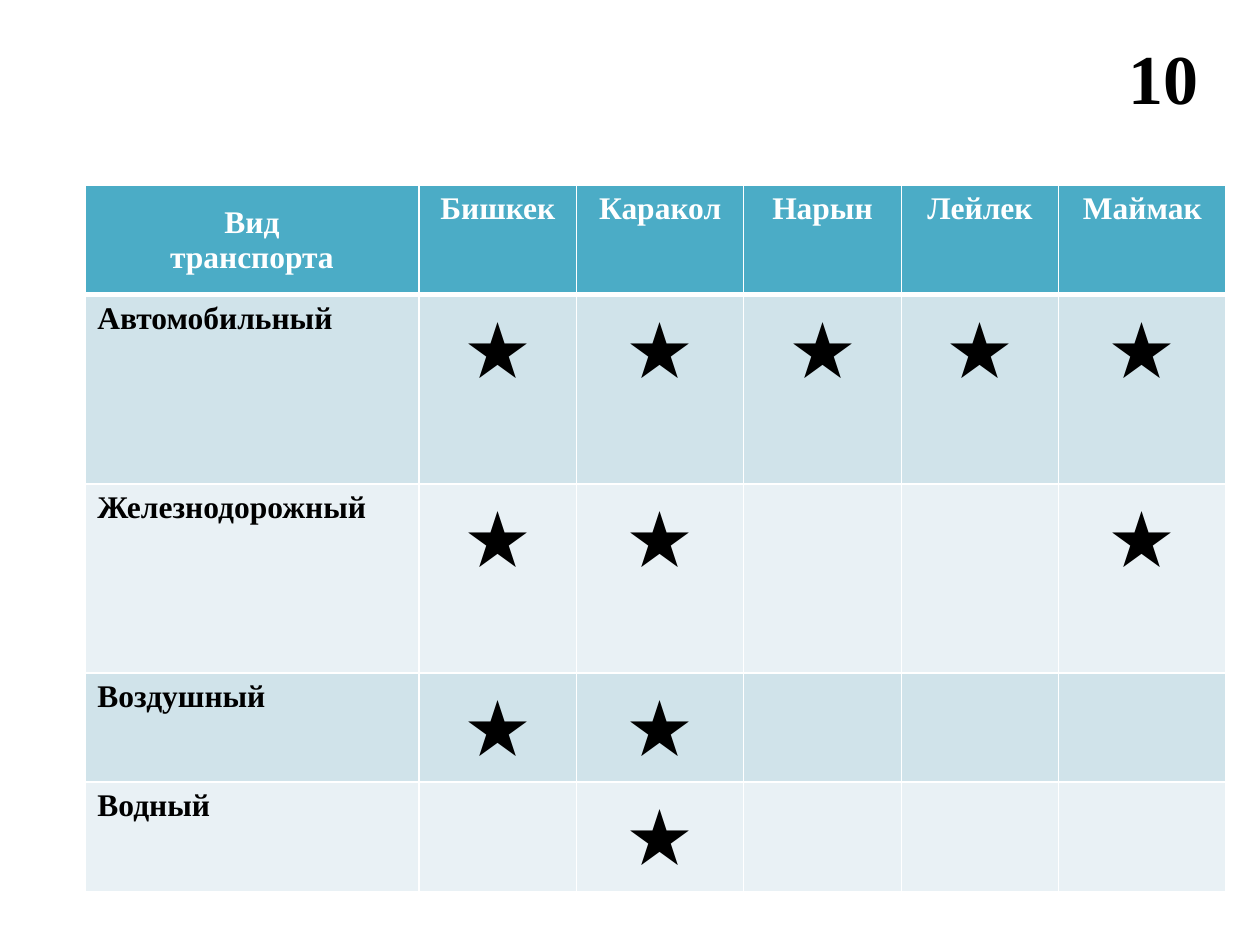
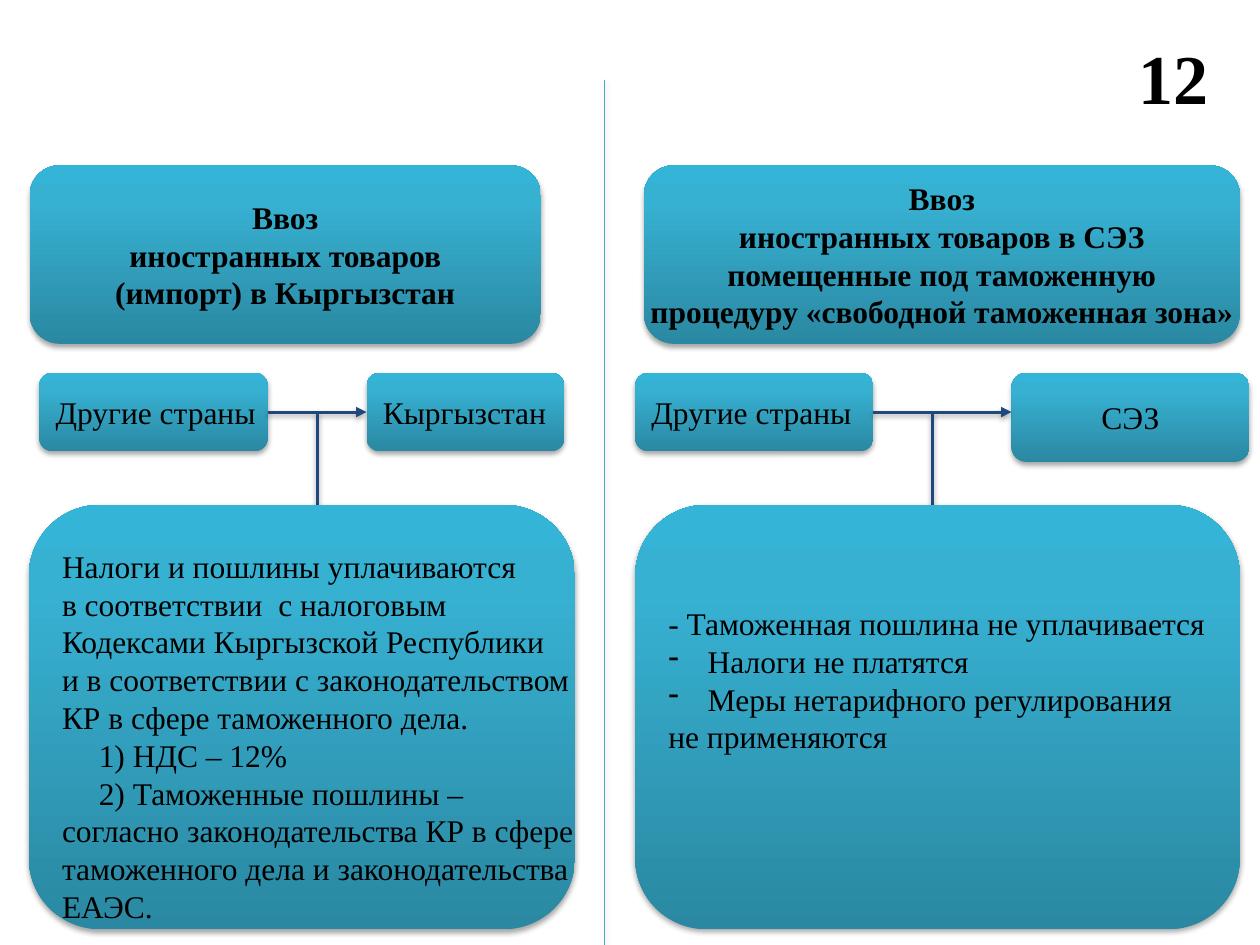
import copy
from dataclasses import dataclass

import pptx
import pptx.dml.color
import pptx.enum.shapes
import pptx.enum.text
import pptx.oxml
import pptx.oxml.ns
import pptx.util

Pt = pptx.util.Pt
RGB = pptx.dml.color.RGBColor.from_string
ALIGN = pptx.enum.text.PP_ALIGN
ANCHOR = pptx.enum.text.MSO_ANCHOR
NS = pptx.oxml.ns.nsdecls("a")


@dataclass(frozen=True)
class Theme:
    font: str = "Times New Roman"
    star_font: str = "Noto Sans CJK KR"
    body_size: int = 18
    star_size: int = 36
    number_size: int = 40
    text: str = "000000"
    white: str = "FFFFFF"
    header: str = "4BACC6"
    bands: tuple = ("D0E3EA", "E9F1F5")
    arrow: str = "1F497D"
    divider: str = "46AAC5"
    gradient: tuple = ((0, "2A88A2"), (80, "37B1D2"), (100, "34B4D6"))


theme = Theme()

stops = "".join(
    f'<a:gs pos="{pos * 1000}"><a:srgbClr val="{color}"/></a:gs>'
    for pos, color in theme.gradient
)
gradient = pptx.oxml.parse_xml(
    f'<a:gradFill {NS} rotWithShape="1"><a:gsLst>{stops}</a:gsLst>'
    '<a:lin ang="16200000" scaled="0"/></a:gradFill>'
)
shadow = pptx.oxml.parse_xml(
    f'<a:effectLst {NS}><a:outerShdw blurRad="{Pt(3.1)}" dist="{Pt(1.8)}" dir="5400000" '
    f'rotWithShape="0"><a:srgbClr val="{theme.text}"><a:alpha val="35000"/></a:srgbClr>'
    "</a:outerShdw></a:effectLst>"
)


def add_box(slide, place, lines, align=ALIGN.LEFT, bold=False):
    """Add a rounded gradient box with one paragraph per line; place is in points."""
    sp = slide.shapes.add_shape(
        pptx.enum.shapes.MSO_SHAPE.ROUNDED_RECTANGLE, *(Pt(v) for v in place)
    )
    sp.adjustments[0] = 0.167
    sp.line.fill.background()
    sp._element.spPr.insert(2, copy.deepcopy(gradient))
    sp._element.spPr.append(copy.deepcopy(shadow))
    tf = sp.text_frame
    tf.word_wrap = False
    tf.vertical_anchor = ANCHOR.MIDDLE
    tf.text = "\n".join(lines)
    for p in tf.paragraphs:
        p.alignment = align
        f = p.runs[0].font
        f.name, f.size, f.bold = theme.font, Pt(theme.body_size), bold
        f.color.rgb = RGB(theme.text)
    return sp


def add_line(slide, ends, color, width):
    """Add a straight shadowed connector; ends is x1, y1, x2, y2 in points."""
    line = slide.shapes.add_connector(
        pptx.enum.shapes.MSO_CONNECTOR.STRAIGHT, *(Pt(v) for v in ends)
    )
    line.line.color.rgb = RGB(color)
    line.line.width = Pt(width)
    line._element.spPr.append(copy.deepcopy(shadow))
    return line


prs = pptx.Presentation()
prs.slide_width, prs.slide_height = Pt(720), Pt(540)

# Both slides carry a large number at the top right
for number, left in (("10", 638), ("12", 643.5)):
    s = prs.slides.add_slide(prs.slide_layouts[6])
    tf = s.shapes.add_textbox(Pt(left), Pt(16), Pt(57), Pt(55.5)).text_frame
    tf.word_wrap = True
    tf.text = number
    f = tf.paragraphs[0].runs[0].font
    f.name, f.size, f.bold = theme.font, Pt(theme.number_size), True
    f.color.rgb = RGB(theme.text)
transport_slide, import_slide = prs.slides

# Transport table
cities = ["Бишкек", "Каракол", "Нарын", "Лейлек", "Маймак"]
served = {
    "Автомобильный": cities,
    "Железнодорожный": ["Бишкек", "Каракол", "Маймак"],
    "Воздушный": ["Бишкек", "Каракол"],
    "Водный": ["Каракол"],
}
rows = [["Вид\nтранспорта"] + cities]
for transport, stations in served.items():
    rows.append([transport] + ["★" if city in stations else "" for city in cities])

widths = [191, 90, 95.5, 90, 90, 95.5]
heights = [62.5, 108, 108, 62.5, 62.5]
table = transport_slide.shapes.add_table(
    len(rows), len(widths), Pt(48.5), Pt(106), Pt(sum(widths)), Pt(sum(heights))
).table
for column, width in zip(table.columns, widths):
    column.width = Pt(width)
for row, height in zip(table.rows, heights):
    row.height = Pt(height)

for i, row in enumerate(rows):
    for j, text in enumerate(row):
        cell = table.cell(i, j)
        tcPr = cell._tc.get_or_add_tcPr()
        for side in "LRTB":
            thick = (i, side) in ((0, "B"), (1, "T"))
            tcPr.append(pptx.oxml.parse_xml(
                f'<a:ln{side} {NS} w="{Pt(3 if thick else 1)}"><a:solidFill>'
                f'<a:srgbClr val="{theme.white}"/></a:solidFill></a:ln{side}>'
            ))
        cell.fill.solid()
        cell.fill.fore_color.rgb = RGB(theme.header if i == 0 else theme.bands[(i - 1) % 2])
        if not text:
            continue
        cell.text = text
        star = text == "★"
        for p in cell.text_frame.paragraphs:
            p.alignment = ALIGN.CENTER if i == 0 or star else ALIGN.LEFT
            f = p.runs[0].font
            f.name = theme.star_font if star else theme.font
            f.size = Pt(theme.star_size if star else theme.body_size)
            f.bold = not star
            f.color.rgb = RGB(theme.white if i == 0 else theme.text)
table.cell(0, 0).vertical_anchor = ANCHOR.MIDDLE

# Import schemes: heading, origin, destination and rules on each side of the divider
panels = [
    {
        "heading": ((17, 94.5, 292, 102),
                    ["Ввоз", "иностранных товаров", "(импорт) в Кыргызстан"]),
        "origin": (22.5, 213, 130.5, 45),
        "destination": ((209.5, 213, 113, 45), ["Кыргызстан"], ALIGN.LEFT),
        "stem": 181.5,
        "rules": ((16.5, 288.5, 312, 242.5), [
            "Налоги и пошлины уплачиваются",
            "в соответствии  с налоговым",
            "Кодексами Кыргызской Республики",
            "и в соответствии с законодательством",
            "КР в сфере таможенного дела.",
            "1) НДС – 12%",
            "2) Таможенные пошлины –",
            "согласно законодательства КР в сфере",
            "таможенного дела и законодательства",
            "ЕАЭС.",
        ]),
    },
    {
        "heading": ((368, 94.5, 340.5, 102),
                    ["Ввоз", "иностранных товаров в СЭЗ", "помещенные под таможенную",
                     "процедуру «свободной таможенная зона»"]),
        "origin": (363, 213, 136, 45),
        "destination": ((578, 213, 136, 51), ["СЭЗ"], ALIGN.CENTER),
        "stem": 533,
        "rules": ((363, 288.5, 345.5, 242.5), [
            "- Таможенная пошлина не уплачивается",
            "Налоги не платятся",
            "Меры нетарифного регулирования",
            "не применяются",
        ]),
    },
]
flow_y = 235.5
rule_boxes = []
for panel in panels:
    add_box(import_slide, *panel["heading"], align=ALIGN.CENTER, bold=True)
    origin = add_box(import_slide, panel["origin"], ["Другие страны"])
    destination = add_box(import_slide, *panel["destination"])

    left, _, width, _ = panel["origin"]
    place = panel["destination"][0]
    arrow = add_line(import_slide, (left + width, flow_y, place[0], flow_y), theme.arrow, 1.75)
    arrow.begin_connect(origin, 3)
    if place[1] + place[3] / 2 == flow_y:
        arrow.end_connect(destination, 1)
    arrow.line._get_or_add_ln().append(pptx.oxml.parse_xml(f'<a:tailEnd {NS} type="triangle"/>'))

    rules_top = panel["rules"][0][1]
    add_line(import_slide, (panel["stem"], rules_top, panel["stem"], flow_y), theme.arrow, 1.75)
    rule_boxes.append(add_box(import_slide, *panel["rules"]))

tax_rules, zone_rules = (sp.text_frame for sp in rule_boxes)
tax_rules.margin_top = Pt(25)
for p in tax_rules.paragraphs[5:7]:
    p._p.get_or_add_pPr().set("indent", str(Pt(21)))
zone_rules.margin_bottom = Pt(46.5)
for p in zone_rules.paragraphs[1:3]:
    pPr = p._p.get_or_add_pPr()
    pPr.set("marL", str(Pt(22.5)))
    pPr.set("indent", str(Pt(-22.5)))
    pPr.append(pptx.oxml.parse_xml(f'<a:buChar {NS} char="-"/>'))

add_line(import_slide, (345.5, 45.5, 345.5, 540), theme.divider, 0.75)

prs.save("out.pptx")
